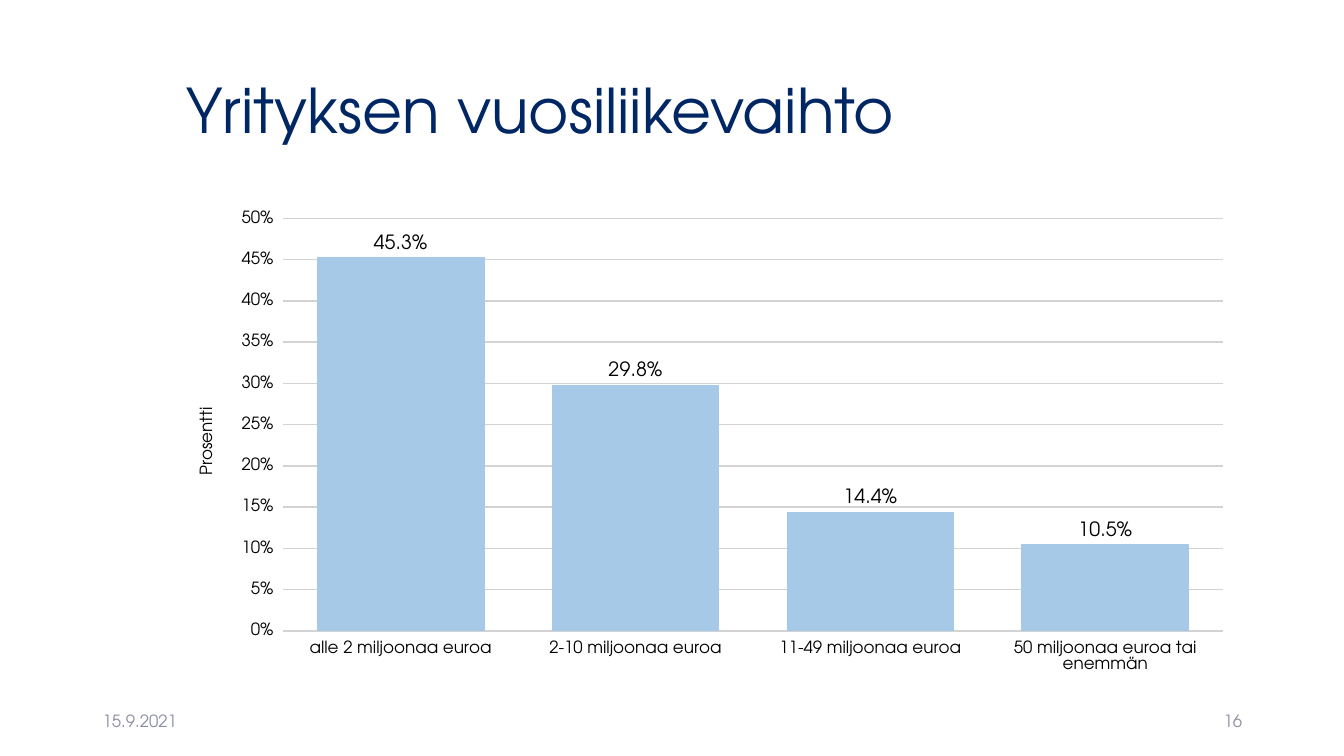
from dataclasses import dataclass

from lxml import etree
from pptx import Presentation
from pptx import util as u
from pptx.chart.data import CategoryChartData
from pptx.dml.color import RGBColor
from pptx.enum import chart as ch, text
from pptx.oxml.ns import qn

WIDTH, HEIGHT = u.Inches(13.33), u.Inches(7.5)
FONT = "TeX Gyre Adventor"
NAVY, GREY, BLACK = "002663", "8C8E9F", "000000"
WHITE, GRID, SKY = "FFFFFF", "D3D3D3", "A5C9E7"

LEFT, BODY_WIDTH = 0.1313, 0.7944
FOOT_TOP, FOOT_WIDTH, FOOT_HEIGHT = 0.9267, 0.225, 0.0533

TURNOVER = {
    "alle 2 miljoonaa euroa": 0.453,
    "2-10 miljoonaa euroa": 0.298,
    "11-49 miljoonaa euroa": 0.144,
    "50 miljoonaa euroa tai enemmän": 0.105,
}
PLOT_SHARES = {"x": 0.1, "y": 0.035, "w": 0.88, "h": 0.86}


@dataclass(frozen=True)
class Box:
    left: float
    top: float
    width: float
    height: float

    def emu(self) -> tuple[int, int, int, int]:
        return (round(self.left * WIDTH), round(self.top * HEIGHT),
                round(self.width * WIDTH), round(self.height * HEIGHT))


@dataclass(frozen=True)
class Label:
    words: str
    box: Box
    size: int
    color: str
    align: text.PP_ALIGN = text.PP_ALIGN.LEFT
    spacing: float = 1.0


LABELS = [
    Label("Yrityksen vuosiliikevaihto", Box(LEFT, 0.0533, BODY_WIDTH, 0.1933),
          44, NAVY, spacing=0.9),
    Label("15.9.2021", Box(0.069, FOOT_TOP, FOOT_WIDTH, FOOT_HEIGHT), 12, GREY),
    Label("16", Box(0.7067, FOOT_TOP, FOOT_WIDTH, FOOT_HEIGHT), 12, GREY,
          text.PP_ALIGN.RIGHT),
]
CHART_BOX = Box(LEFT, 0.2667, BODY_WIDTH, 0.6347)


def rgb(color: str) -> RGBColor:
    return RGBColor.from_string(color)


def set_font(font, size: int, color: str) -> None:
    font.name, font.size, font.bold = FONT, u.Pt(size), False
    font.color.rgb = rgb(color)


def fill_solid(fill, color: str) -> None:
    fill.solid()
    fill.fore_color.rgb = rgb(color)


def add_label(s, label: Label) -> None:
    tf = s.shapes.add_textbox(*label.box.emu()).text_frame
    tf.word_wrap = True
    tf.vertical_anchor = text.MSO_ANCHOR.MIDDLE
    p = tf.paragraphs[0]
    p.text, p.alignment, p.line_spacing = label.words, label.align, label.spacing
    set_font(p.font, label.size, label.color)


def style_plot_area(chart) -> None:
    area = chart._chartSpace.chart.plotArea
    for old in area.findall(qn("c:layout")):
        area.remove(old)
    layout = etree.Element(qn("c:layout"))
    area.insert(0, layout)
    manual = etree.SubElement(layout, qn("c:manualLayout"))
    settings = {"layoutTarget": "inner", "xMode": "edge", "yMode": "edge", **PLOT_SHARES}
    for name, value in settings.items():
        etree.SubElement(manual, qn(f"c:{name}")).set("val", str(value))
    props = etree.SubElement(area, qn("c:spPr"))
    solid = etree.SubElement(props, qn("a:solidFill"))
    etree.SubElement(solid, qn("a:srgbClr")).set("val", WHITE)


def add_turnover_chart(s) -> None:
    data = CategoryChartData(number_format="0.0%")
    data.categories = list(TURNOVER)
    data.add_series("Series 1", list(TURNOVER.values()))
    chart = s.shapes.add_chart(ch.XL_CHART_TYPE.COLUMN_CLUSTERED,
                               *CHART_BOX.emu(), data).chart
    chart.has_legend = chart.has_title = False
    set_font(chart.font, 12, BLACK)
    style_plot_area(chart)

    for axis in (chart.category_axis, chart.value_axis):
        axis.major_tick_mark = ch.XL_TICK_MARK.OUTSIDE
        axis.format.line.fill.background()
        set_font(axis.tick_labels.font, 12, BLACK)

    axis = chart.value_axis
    axis.minimum_scale, axis.maximum_scale, axis.major_unit = 0, 0.5, 0.05
    axis.tick_labels.number_format = "0%"
    axis.tick_labels.number_format_is_linked = False
    axis.major_gridlines.format.line.color.rgb = rgb(GRID)
    axis.major_gridlines.format.line.width = u.Pt(1)
    p = axis.axis_title.text_frame.paragraphs[0]
    p.text = "Prosentti"
    set_font(p.font, 12, BLACK)

    plot = chart.plots[0]
    plot.gap_width, plot.vary_by_categories = 40, False
    fill_solid(plot.series[0].format.fill, SKY)
    plot.has_data_labels = True
    labels = plot.data_labels
    labels.show_value = True
    labels.position = ch.XL_LABEL_POSITION.OUTSIDE_END
    labels.number_format, labels.number_format_is_linked = "0.0%", False
    set_font(labels.font, 14, BLACK)


def main() -> None:
    prs = Presentation()
    prs.slide_width, prs.slide_height = WIDTH, HEIGHT
    s = prs.slides.add_slide(prs.slide_layouts[6])
    fill_solid(s.background.fill, WHITE)
    for label in LABELS:
        add_label(s, label)
    add_turnover_chart(s)
    prs.save("out.pptx")


if __name__ == "__main__":
    main()
